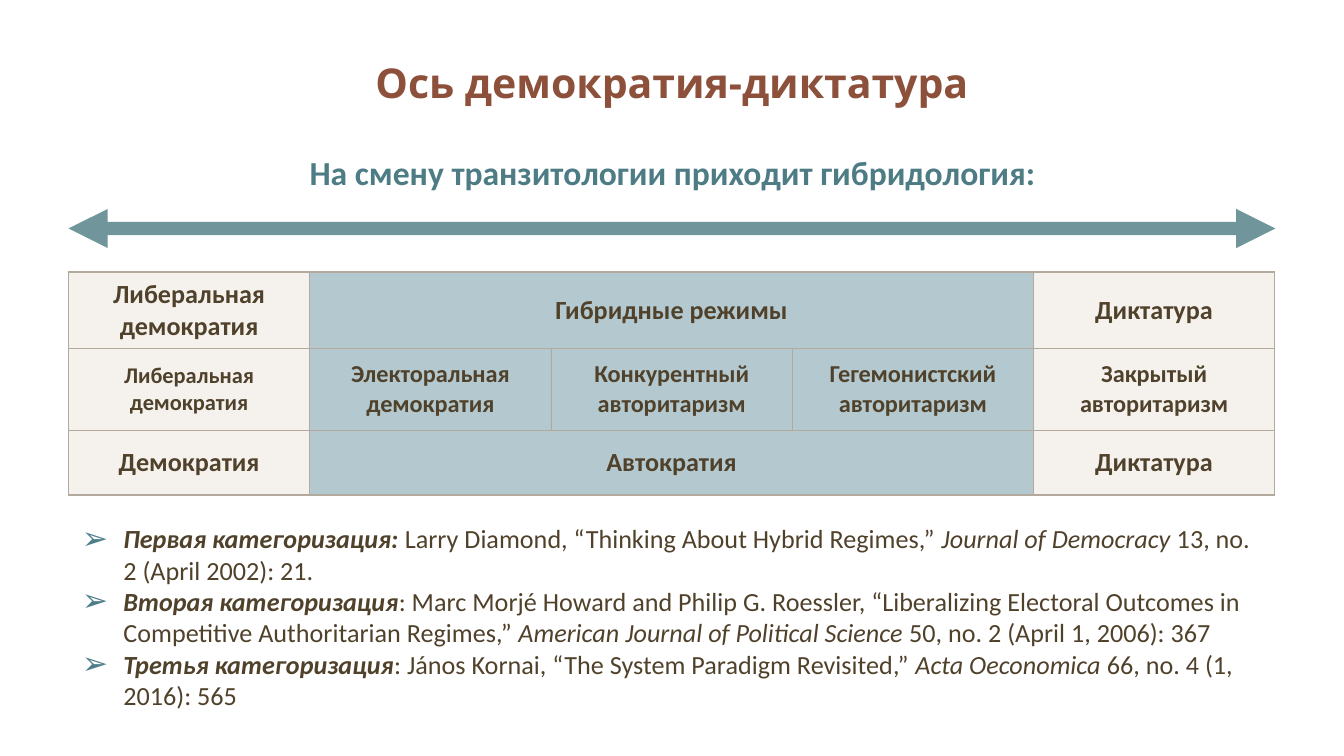
"""Build the slide on the axis from democracy to dictatorship."""
from typing import Any, NamedTuple

from lxml import etree
from pptx import Presentation
from pptx.dml.color import RGBColor
from pptx.enum.shapes import MSO_CONNECTOR
from pptx.enum.text import MSO_ANCHOR, PP_ALIGN
from pptx.oxml.ns import qn
from pptx.util import Emu, Pt

PX = 4572
LINE = MSO_CONNECTOR.STRAIGHT
MIDDLE = MSO_ANCHOR.MIDDLE
CENTER, LEFT = PP_ALIGN.CENTER, PP_ALIGN.LEFT
BODY, HEAD = "Calibri", "Open Sans"
BROWN, RUST, TEAL = "50412B", "8D503B", "4D7C84"
CREAM, BLUE, EDGE, MARK = "EFEAE4", "6B95A1", "B3A99D", "4D7C8B"


class Run(NamedTuple):
    text: str
    size: int = 14
    color: str = BROWN
    bold: bool = False
    slant: bool = False
    font: str = BODY


class Box(NamedTuple):
    left: int
    top: int
    width: int
    height: int


class Cell(NamedTuple):
    text: str
    size: int = 14
    span: int = 1


class Source(NamedTuple):
    label: str
    work: str
    journal: str
    issue: str


COLS = [359] * 5
ROWS = [102, 122, 96]
GRID = [
    [Cell("Либеральная демократия"), Cell("Гибридные режимы", span=3), Cell("Диктатура")],
    [
        Cell("Либеральная демократия", 12),
        Cell("Электоральная демократия", 13),
        Cell("Конкурентный авторитаризм", 13),
        Cell("Гегемонистский авторитаризм", 13),
        Cell("Закрытый авторитаризм", 13),
    ],
    [Cell("Демократия"), Cell("Автократия", span=3), Cell("Диктатура")],
]
SOURCES = [
    Source(
        "Первая категоризация: ",
        "Larry Diamond, “Thinking About Hybrid Regimes,” ",
        "Journal of Democracy",
        " 13, no. 2 (April 2002): 21.",
    ),
    Source(
        "Вторая категоризация",
        ": Marc Morjé Howard and Philip G. Roessler, “Liberalizing Electoral "
        "Outcomes in Competitive Authoritarian Regimes,” ",
        "American Journal of Political Science",
        " 50, no. 2 (April 1, 2006): 367",
    ),
    Source(
        "Третья категоризация",
        ": János Kornai, “The System Paradigm Revisited,” ",
        "Acta Oeconomica",
        " 66, no. 4 (1, 2016): 565",
    ),
]


def px(value: int) -> Emu:
    return Emu(value * PX)


def rgb(code: str) -> RGBColor:
    return RGBColor.from_string(code)


def node(parent: Any, tag: str, **attrs: str) -> Any:
    return etree.SubElement(parent, qn(tag), attrs)


def fade(holder: Any, share: int) -> None:
    for color in holder.iter(qn("a:srgbClr")):
        node(color, "a:alpha", val=str(share * 1000))


def write(para: Any, runs: list[Run], align: Any = CENTER) -> None:
    para.alignment = align
    for item in runs:
        run = para.add_run()
        run.text = item.text
        font = run.font
        font.name, font.size = item.font, Pt(item.size)
        font.bold, font.italic = item.bold, item.slant
        font.color.rgb = rgb(item.color)


def frame(slide: Any, box: Box) -> Any:
    text = slide.shapes.add_textbox(*map(px, box)).text_frame
    text.word_wrap = True
    return text


def arrow(slide: Any, left: int, right: int, top: int) -> None:
    axis = slide.shapes.add_connector(LINE, px(left), px(top), px(right), px(top))
    axis.line.width = Pt(7)
    axis.line.color.rgb = rgb(TEAL)
    line = axis.line._ln
    fade(line, 80)
    for end in ("a:headEnd", "a:tailEnd"):
        node(line, end, type="triangle")
    node(axis._element.spPr, "a:effectLst")


def border(cell: Any, row: int, col: int) -> None:
    outer = {
        "a:lnL": col == 0,
        "a:lnR": col == len(COLS) - 1,
        "a:lnT": row == 0,
        "a:lnB": row == len(ROWS) - 1,
    }
    props = cell._tc.get_or_add_tcPr()
    for place, (tag, edge) in enumerate(outer.items()):
        line = node(props, tag, w=str(Pt(1 if edge else 0.5)), cmpd="sng")
        node(node(line, "a:solidFill"), "a:srgbClr", val=EDGE)
        node(line, "a:prstDash", val="solid")
        props.insert(place, line)


def paint(cell: Any, row: int, col: int) -> None:
    side = col in (0, len(COLS) - 1)
    cell.fill.solid()
    cell.fill.fore_color.rgb = rgb(CREAM if side else BLUE)
    fade(cell._tc.tcPr, 60 if side else 50)
    border(cell, row, col)


def table(slide: Any, box: Box) -> None:
    shape = slide.shapes.add_table(len(ROWS), len(COLS), *map(px, box))
    grid = shape.table
    for col, width in enumerate(COLS):
        grid.columns[col].width = px(width)
    for row, height in enumerate(ROWS):
        grid.rows[row].height = px(height)
        for col in range(len(COLS)):
            paint(grid.cell(row, col), row, col)
        col = 0
        for item in GRID[row]:
            cell = grid.cell(row, col)
            if item.span > 1:
                cell.merge(grid.cell(row, col + item.span - 1))
            cell.vertical_anchor = MIDDLE
            write(cell.text_frame.paragraphs[0], [Run(item.text, item.size, bold=True)])
            col += item.span
    shape.height = px(box.height)


def bullet(para: Any) -> None:
    props = para._p.get_or_add_pPr()
    props.set("marL", str(px(62)))
    props.set("indent", str(px(-62)))
    node(node(props, "a:buClr"), "a:srgbClr", val=MARK)
    node(props, "a:buSzPct", val="120000")
    node(props, "a:buFont", typeface=BODY)
    node(props, "a:buChar", char="➢")


def cite(slide: Any, box: Box) -> None:
    text = frame(slide, box)
    for index, item in enumerate(SOURCES):
        para = text.add_paragraph() if index else text.paragraphs[0]
        bullet(para)
        label = Run(item.label, bold=True, slant=True)
        journal = Run(item.journal, slant=True)
        write(para, [label, Run(item.work), journal, Run(item.issue)], LEFT)


def main() -> None:
    deck = Presentation()
    deck.slide_width, deck.slide_height = px(2000), px(1125)
    slide = deck.slides.add_slide(deck.slide_layouts[6])
    title = frame(slide, Box(24, 28, 1952, 188))
    title.vertical_anchor = MIDDLE
    write(title.paragraphs[0], [Run("Ось демократия-диктатура", 22, RUST, True, font=HEAD)])
    arrow(slide, 102, 1898, 340)
    lead = frame(slide, Box(25, 216, 1952, 80))
    write(lead.paragraphs[0], [Run("На смену транзитологии приходит гибридология:", 18, TEAL, True)])
    table(slide, Box(102, 405, sum(COLS), 330))
    cite(slide, Box(102, 768, 1796, 302))
    deck.save("out.pptx")


if __name__ == "__main__":
    main()
